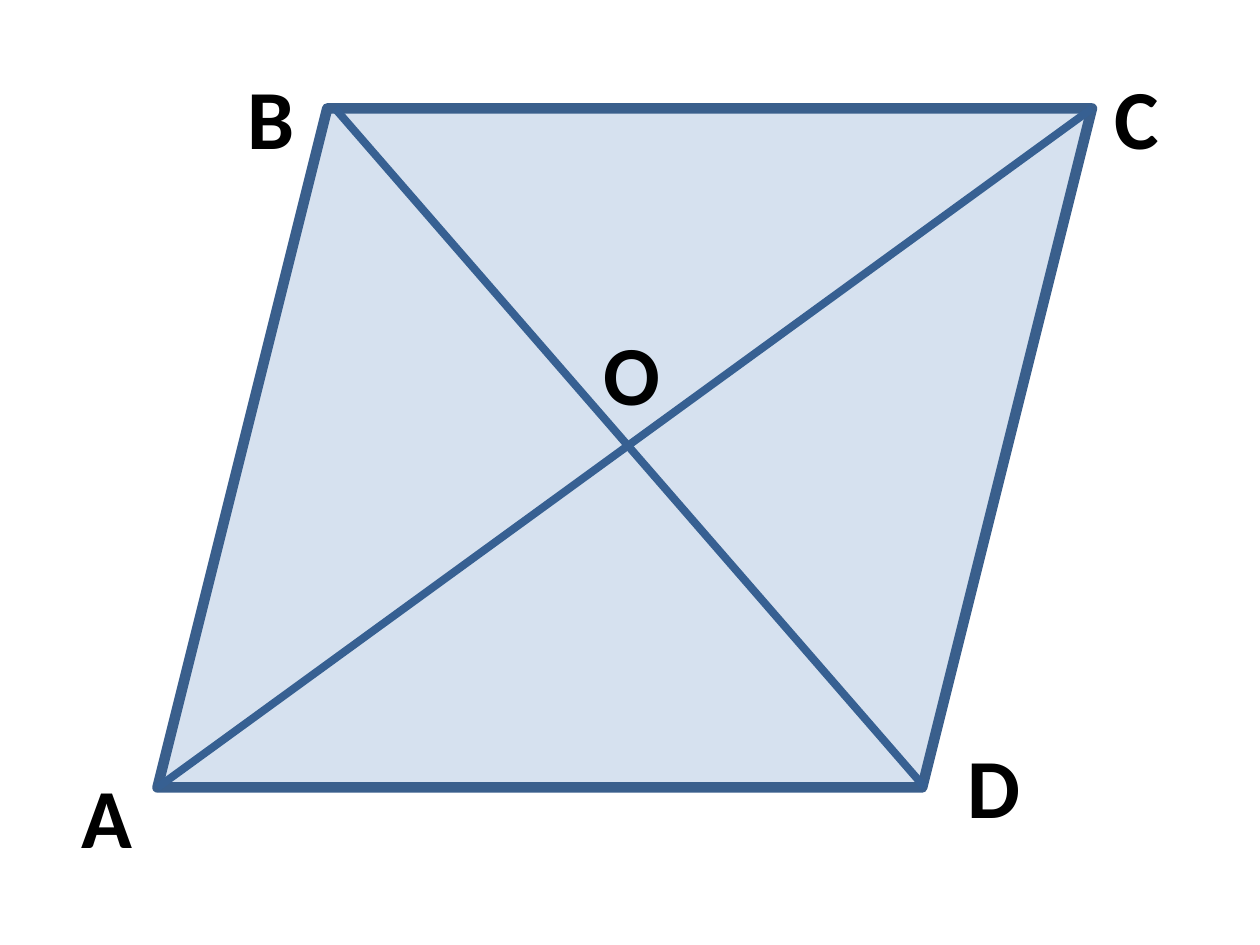
from lxml import etree
from pptx import Presentation
from pptx.dml.color import RGBColor
from pptx.enum.shapes import MSO_CONNECTOR, MSO_SHAPE
from pptx.enum.text import MSO_AUTO_SIZE
from pptx.oxml.ns import qn
from pptx.util import Pt

FIGURE_BOX = (90, 62, 534, 388)
SLANT = 0.25
LABEL_SIZE = (50.4, 65.4)
# Top left corner of each vertex label
LABELS = {
    "А": (39.6, 433.5),
    "B": (134.6, 33.8),
    "C": (630, 33.8),
    "D": (545.8, 416.2),
    "O": (337.7, 180),
}


def color(hex_string):
    return RGBColor.from_string(hex_string)


def add_parallelogram(slide, left, top, width, height):
    shape = slide.shapes.add_shape(
        MSO_SHAPE.PARALLELOGRAM, Pt(left), Pt(top), Pt(width), Pt(height))
    shape.adjustments[0] = SLANT
    shape.shadow.inherit = False
    shape.fill.solid()
    shape.fill.fore_color.rgb = color("4F81BD")
    # Translucent fill
    fill_color = shape.fill._xPr.find(qn("a:solidFill"))[0]
    etree.SubElement(fill_color, qn("a:alpha"), val="23000")
    shape.line.color.rgb = color("3A5F8C")
    shape.line.width = Pt(6)


def add_diagonal(slide, start, end):
    connector = slide.shapes.add_connector(
        MSO_CONNECTOR.STRAIGHT, *(Pt(value) for value in start + end))
    connector.line.color.rgb = color("376092")
    connector.line.width = Pt(4.5)
    etree.SubElement(connector._element.spPr, qn("a:effectLst"))


def add_label(slide, text, left, top, width, height):
    text_box = slide.shapes.add_textbox(Pt(left), Pt(top), Pt(width), Pt(height))
    frame = text_box.text_frame
    frame.word_wrap = True
    frame.auto_size = MSO_AUTO_SIZE.SHAPE_TO_FIT_TEXT
    paragraph = frame.paragraphs[0]
    paragraph.text = text
    paragraph.font.name = "Calibri"
    paragraph.font.size = Pt(48)
    paragraph.font.bold = True
    paragraph.font.color.rgb = color("000000")


def add_figure(slide, left, top, width, height):
    right, bottom = left + width, top + height
    add_parallelogram(slide, left, top, width, height)

    # Vertex labels
    for text, (label_left, label_top) in LABELS.items():
        add_label(slide, text, label_left, label_top, *LABEL_SIZE)

    # Diagonals; the second starts slightly inside the thick corner
    inset = SLANT * min(width, height)
    add_diagonal(slide, (left, bottom), (right, top))
    add_diagonal(slide, (left + inset + 4.5, top), (right - inset + 1.5, bottom))


def main():
    presentation = Presentation()
    presentation.slide_width = Pt(720)
    presentation.slide_height = Pt(540)
    slide = presentation.slides.add_slide(presentation.slide_layouts[6])
    add_figure(slide, *FIGURE_BOX)
    presentation.save("out.pptx")


if __name__ == "__main__":
    main()
